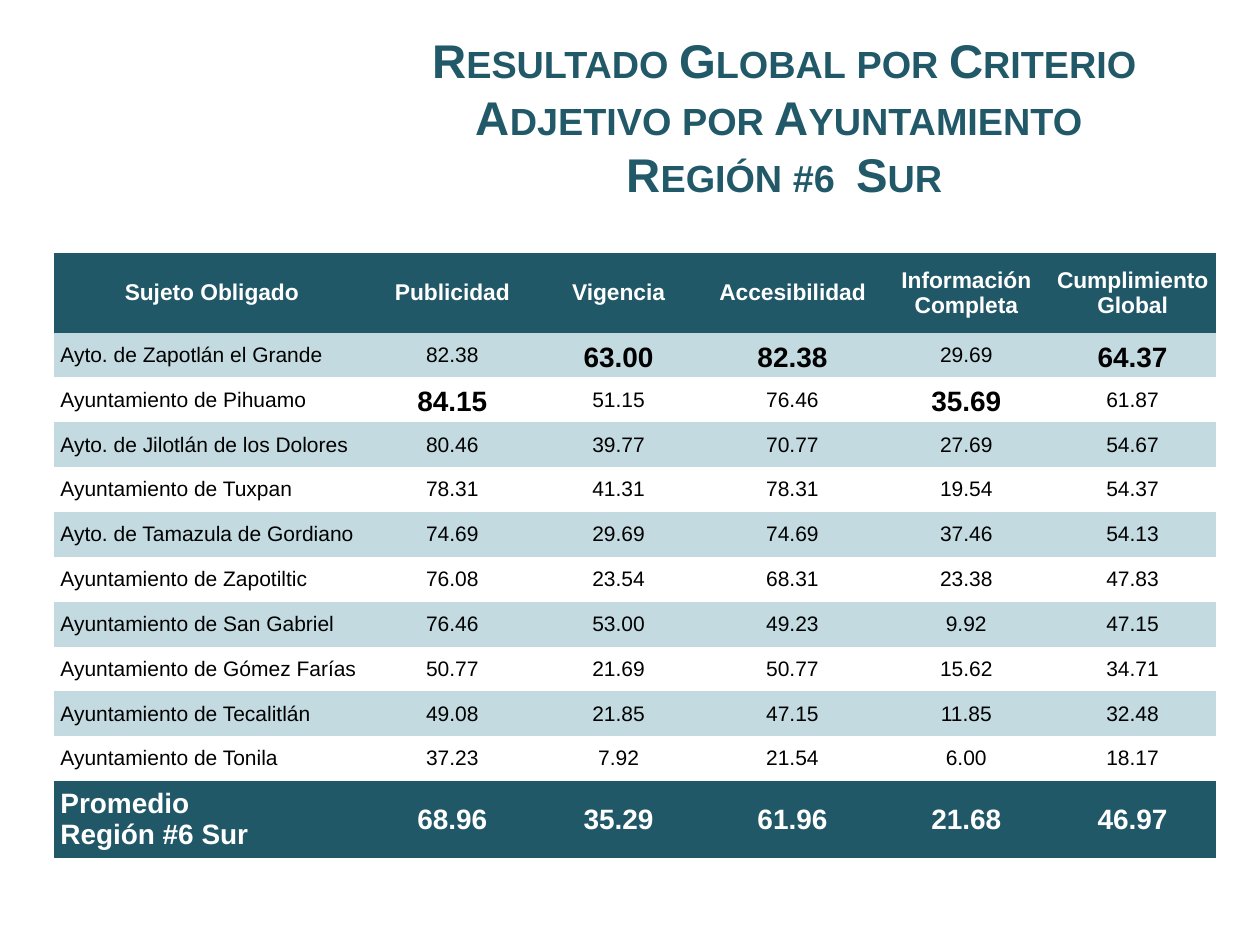
from pptx import Presentation
from pptx.dml.color import RGBColor as RGB
from pptx.enum.text import MSO_ANCHOR as Anchor, PP_ALIGN as Align
from pptx.util import Inches, Pt

WIDTH, HEIGHT = 10, 7.5
COLORS = {"title": "215968", "dark": "215868", "band": "C2DAE0",
          "white": "FFFFFF", "black": "000000"}
FORMATS = {
    "title": {"size": Pt(27), "bold": True, "color": "title"},
    "header": {"size": Pt(13), "bold": True, "color": "white"},
    "body": {"size": Pt(12), "bold": False, "color": "black"},
    "best": {"size": Pt(16), "bold": True, "color": "black"},
    "average": {"size": Pt(16), "bold": True, "color": "white"},
}
TITLE = "Resultado Global por Criterio Adjetivo por Ayuntamiento \vRegión #6  Sur"
HEADER = ["Sujeto Obligado", "Publicidad", "Vigencia", "Accesibilidad",
          "Información\vCompleta", "Cumplimiento Global"]
RESULTS = [
    ["Ayto. de Zapotlán el Grande", "82.38", "63.00", "82.38", "29.69", "64.37"],
    ["Ayuntamiento de Pihuamo", "84.15", "51.15", "76.46", "35.69", "61.87"],
    ["Ayto. de Jilotlán de los Dolores", "80.46", "39.77", "70.77", "27.69", "54.67"],
    ["Ayuntamiento de Tuxpan", "78.31", "41.31", "78.31", "19.54", "54.37"],
    ["Ayto. de Tamazula de Gordiano", "74.69", "29.69", "74.69", "37.46", "54.13"],
    ["Ayuntamiento de Zapotiltic", "76.08", "23.54", "68.31", "23.38", "47.83"],
    ["Ayuntamiento de San Gabriel", "76.46", "53.00", "49.23", "9.92", "47.15"],
    ["Ayuntamiento de Gómez Farías", "50.77", "21.69", "50.77", "15.62", "34.71"],
    ["Ayuntamiento de Tecalitlán", "49.08", "21.85", "47.15", "11.85", "32.48"],
    ["Ayuntamiento de Tonila", "37.23", "7.92", "21.54", "6.00", "18.17"],
]
AVERAGE = ["Promedio\nRegión #6 Sur", "68.96", "35.29", "61.96", "21.68", "46.97"]
BEST = {(1, 2), (1, 3), (1, 5), (2, 1), (2, 4)}
COLUMNS = [2.5, 1.32, 1.32, 1.44, 1.32, 1.32]
TABLE_HEIGHT, HEADER_HEIGHT, AVERAGE_HEIGHT = 4.8, 0.63, 0.61
NO_STYLE = "{2D5ABB26-0587-4C30-8999-92F81FD0307C}"


def write(tf, text, kind, align):
    tf.text = text
    for p in tf.paragraphs:
        p.alignment = align
        if kind == "best":
            p.line_spacing = 1.15
        for r in p.runs:
            r.font.name = "Arial"
            for name, value in FORMATS[kind].items():
                if name == "color":
                    r.font.color.rgb = RGB.from_string(COLORS[value])
                else:
                    setattr(r.font, name, value)


def add_title(s):
    box = s.shapes.add_textbox(Inches(0.295 * WIDTH), Inches(0.04 * HEIGHT),
                               Inches(0.655 * WIDTH), Inches(HEIGHT / 6))
    tf = box.text_frame
    tf.word_wrap = True
    tf.vertical_anchor = Anchor.MIDDLE
    write(tf, TITLE, "title", Align.CENTER)
    for p in tf.paragraphs:
        for r in p.runs:
            r.font._element.set("cap", "small")


def fill_cell(cell, text, kind, align, color):
    for side, inset in {"left": 0.05, "right": 0.05, "top": 0, "bottom": 0}.items():
        setattr(cell, f"margin_{side}", Inches(inset))
    cell.vertical_anchor = Anchor.MIDDLE
    if color:
        cell.fill.solid()
        cell.fill.fore_color.rgb = RGB.from_string(COLORS[color])
    else:
        cell.fill.background()
    write(cell.text_frame, text, kind, align)


def row_style(row, last):
    if row == 0:
        return "header", "dark", HEADER_HEIGHT
    if row == last:
        return "average", "dark", AVERAGE_HEIGHT
    height = (TABLE_HEIGHT - HEADER_HEIGHT - AVERAGE_HEIGHT) / len(RESULTS)
    return "body", "band" if row % 2 else None, height


def add_results(s):
    data = [HEADER, *RESULTS, AVERAGE]
    last = len(data) - 1
    frame = s.shapes.add_table(len(data), len(COLUMNS), Inches(0.043 * WIDTH),
                               Inches(0.268 * HEIGHT), Inches(sum(COLUMNS)),
                               Inches(TABLE_HEIGHT))
    table = frame.table
    table.first_row = table.horz_banding = False
    table._tbl.tblPr.find("{*}tableStyleId").text = NO_STYLE
    for column, width in zip(table.columns, COLUMNS):
        column.width = Inches(width)
    for row, texts in enumerate(data):
        kind, color, height = row_style(row, last)
        table.rows[row].height = Inches(height)
        for col, text in enumerate(texts):
            align = Align.LEFT if row and not col else Align.CENTER
            fill_cell(table.cell(row, col), text,
                      "best" if (row, col) in BEST else kind, align, color)


def main():
    prs = Presentation()
    prs.slide_width, prs.slide_height = Inches(WIDTH), Inches(HEIGHT)
    s = prs.slides.add_slide(prs.slide_layouts[6])
    add_title(s)
    add_results(s)
    prs.save("out.pptx")


if __name__ == "__main__":
    main()
